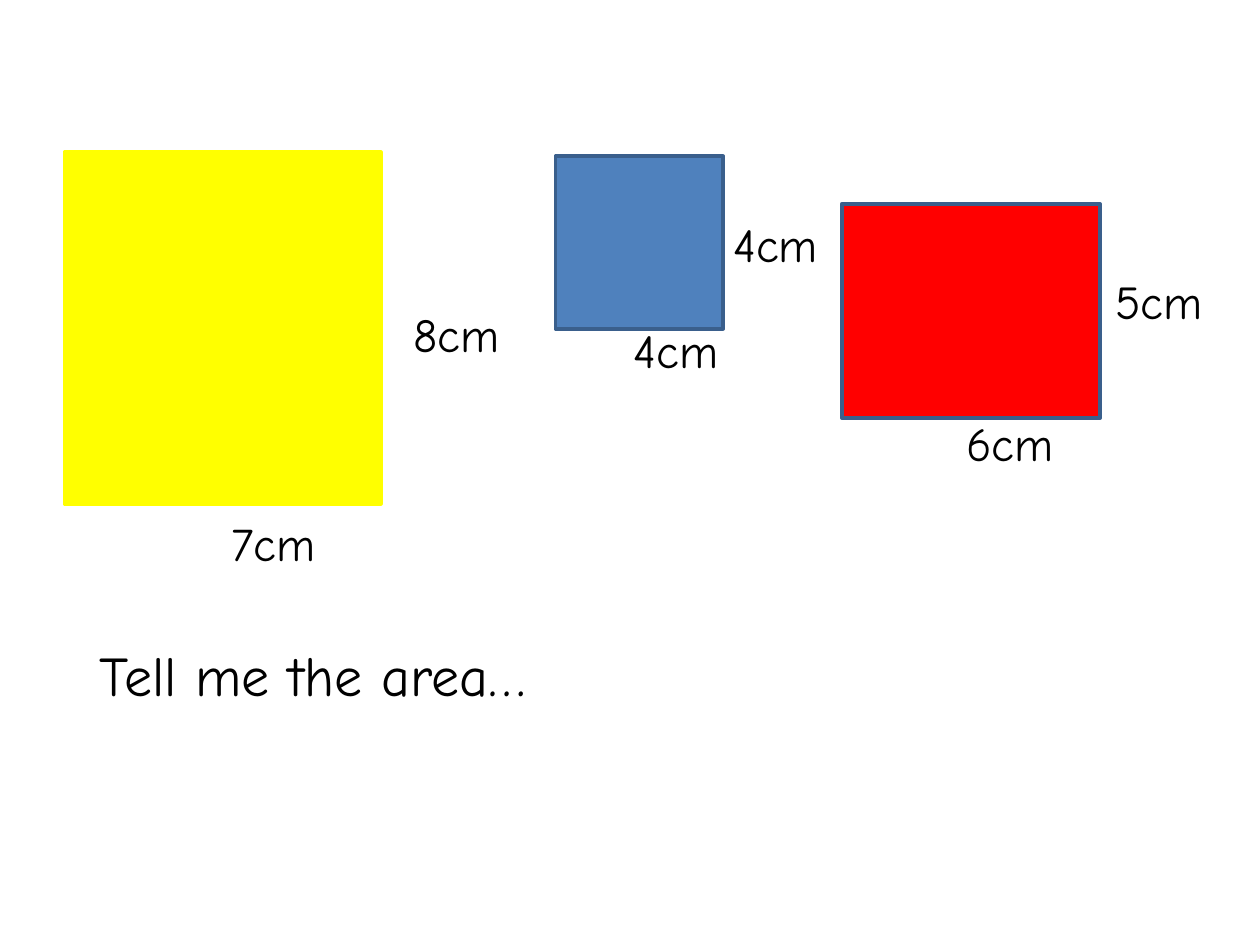
"""Build a slide asking for the areas of three labelled rectangles."""
from dataclasses import dataclass

from lxml.etree import SubElement
from pptx import Presentation
from pptx.dml.color import RGBColor
from pptx.enum.shapes import MSO_SHAPE as Preset
from pptx.enum.text import MSO_AUTO_SIZE as AutoSize
from pptx.oxml.ns import qn
from pptx.slide import Slide
from pptx.util import Cm, Pt

FONT = "Comic Neue"
BLACK = RGBColor(0x00, 0x00, 0x00)
YELLOW = RGBColor(0xFF, 0xFF, 0x00)
BLUE = RGBColor(0x4F, 0x81, 0xBD)
DARK_BLUE = RGBColor(0x3A, 0x5F, 0x8C)
RED = RGBColor(0xFF, 0x00, 0x00)


@dataclass
class Rectangle:
    left: float
    top: float
    width: float
    height: float
    fill: RGBColor
    outline: RGBColor


@dataclass
class Label:
    text: str
    left: float
    top: float
    width: float
    height: float = 1.42


RECTANGLES = [
    Rectangle(1.3, 3.07, 6.38, 7.09, YELLOW, YELLOW),
    Rectangle(11.2, 3.15, 3.38, 3.48, BLUE, DARK_BLUE),
    Rectangle(16.97, 4.11, 5.21, 4.32, RED, DARK_BLUE),
]
LABELS = [
    Label("6cm", 19.23, 8.23, 2.39),
    Label("4cm", 14.53, 4.22, 2.57),
    Label("5cm", 22.23, 5.36, 2.36),
    Label("7cm", 4.42, 10.24, 2.54),
    Label("8cm", 8.08, 6.02, 2.54),
    Label("4cm", 12.52, 6.35, 2.41),
]


def style_paragraph(paragraph, size: float) -> None:
    paragraph.font.name = FONT
    paragraph.font.size = Pt(size)
    paragraph.font.color.rgb = BLACK


def fill_prompt(slide: Slide, text: str) -> None:
    body = slide.placeholders[1]
    body.left, body.top = Cm(1.75), Cm(12.78)
    body.width, body.height = Cm(21.9), Cm(2.46)
    body.text_frame.text = text
    paragraph = body.text_frame.paragraphs[0]
    properties = paragraph._p.get_or_add_pPr()
    properties.set("marL", "0")
    properties.set("indent", "0")
    SubElement(properties, qn("a:buNone"))
    style_paragraph(paragraph, 32)


def draw_rectangle(slide: Slide, rectangle: Rectangle) -> None:
    shape = slide.shapes.add_shape(
        Preset.RECTANGLE, Cm(rectangle.left), Cm(rectangle.top),
        Cm(rectangle.width), Cm(rectangle.height))
    shape.shadow.inherit = False
    shape.fill.solid()
    shape.fill.fore_color.rgb = rectangle.fill
    shape.line.color.rgb = rectangle.outline
    shape.line.width = Pt(2)


def draw_label(slide: Slide, label: Label) -> None:
    box = slide.shapes.add_textbox(
        Cm(label.left), Cm(label.top), Cm(label.width), Cm(label.height))
    frame = box.text_frame
    frame.word_wrap = True
    frame.auto_size = AutoSize.SHAPE_TO_FIT_TEXT
    frame.text = label.text
    style_paragraph(frame.paragraphs[0], 27)


def main() -> None:
    presentation = Presentation()
    presentation.slide_width, presentation.slide_height = Cm(25.4), Cm(19.05)
    slide = presentation.slides.add_slide(presentation.slide_layouts[1])
    title = slide.shapes.title.element
    title.getparent().remove(title)
    fill_prompt(slide, "Tell me the area…")
    for rectangle in RECTANGLES:
        draw_rectangle(slide, rectangle)
    for label in LABELS:
        draw_label(slide, label)
    presentation.save("out.pptx")


if __name__ == "__main__":
    main()
